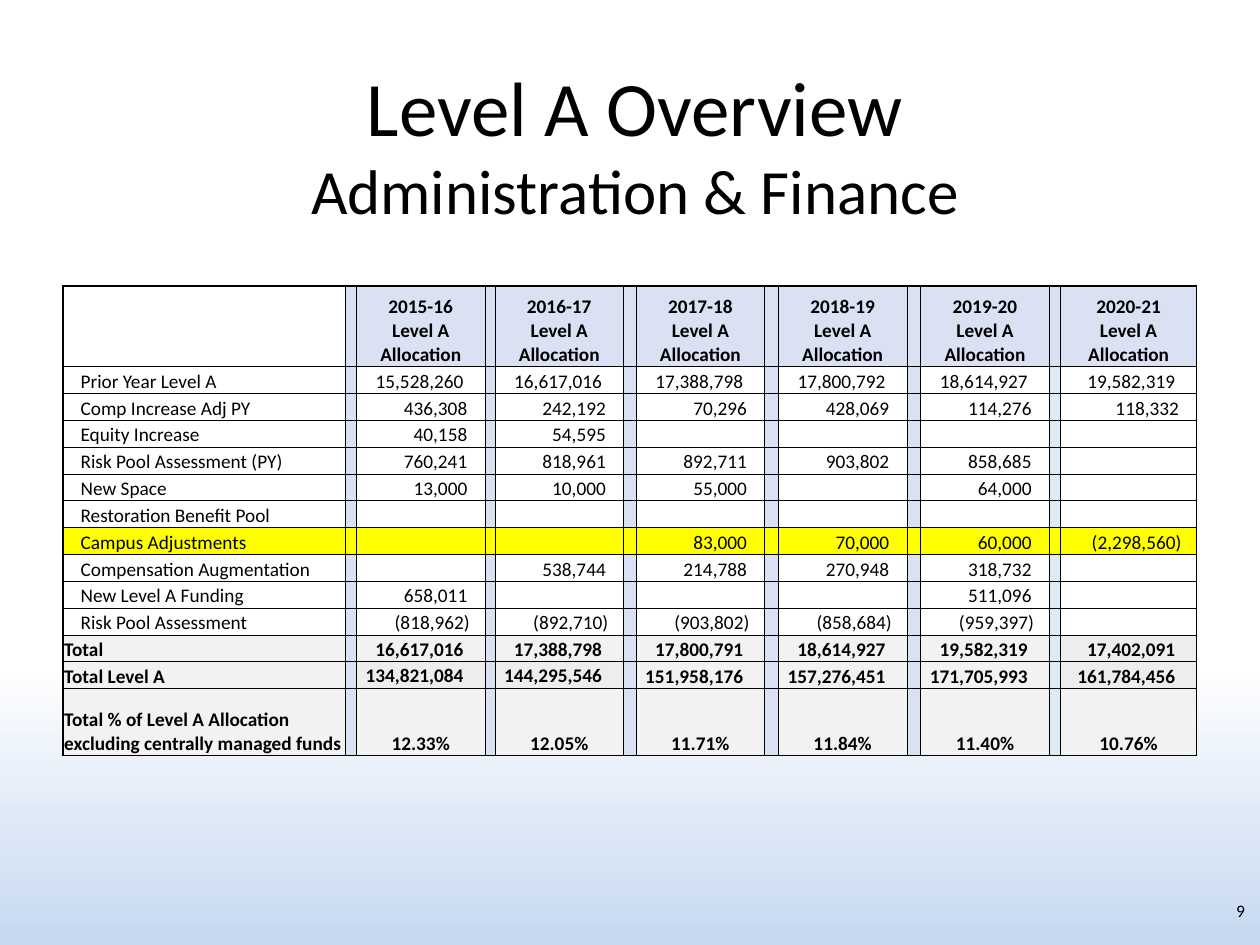
"""Build the Level A overview slide for Administration & Finance."""
import pptx
import pptx.dml.color
import pptx.enum.text
import pptx.oxml
import pptx.oxml.ns
import pptx.util

Inches = pptx.util.Inches
Pt = pptx.util.Pt
ALIGN = pptx.enum.text.PP_ALIGN
ANCHOR = pptx.enum.text.MSO_ANCHOR

COLORS = {
    "ink": "000000", "white": "FFFFFF", "sky": "C6D9F1", "head": "D9E1F2",
    "pale": "DDEBF7", "mark": "FFFF00", "total": "F2F2F2", "gray": "EDEDED",
}
YEARS = ["2015-16", "2016-17", "2017-18", "2018-19", "2019-20", "2020-21"]
ROWS = [
    ["Prior Year Level A", "15,528,260", "16,617,016", "17,388,798",
     "17,800,792", "18,614,927", "19,582,319"],
    ["Comp Increase Adj PY", "436,308", "242,192", "70,296", "428,069", "114,276", "118,332"],
    ["Equity Increase", "40,158", "54,595", "", "", "", ""],
    ["Risk Pool Assessment (PY)", "760,241", "818,961", "892,711", "903,802", "858,685", ""],
    ["New Space", "13,000", "10,000", "55,000", "", "64,000", ""],
    ["Restoration Benefit Pool", "", "", "", "", "", ""],
    ["Campus Adjustments", "", "", "83,000", "70,000", "60,000", "(2,298,560)"],
    ["Compensation Augmentation", "", "538,744", "214,788", "270,948", "318,732", ""],
    ["New Level A Funding", "658,011", "", "", "", "511,096", ""],
    ["Risk Pool Assessment", "(818,962)", "(892,710)", "(903,802)",
     "(858,684)", "(959,397)", ""],
    ["Total", "16,617,016", "17,388,798", "17,800,791",
     "18,614,927", "19,582,319", "17,402,091"],
    ["Total Level A", "134,821,084", "144,295,546", "151,958,176",
     "157,276,451", "171,705,993", "161,784,456"],
    ["Total % of Level A Allocation excluding centrally managed funds",
     "12.33%", "12.05%", "11.71%", "11.84%", "11.40%", "10.76%"],
]
GAPS = [0.09, 0.08, 0.1, 0.11, 0.11, 0.09]
WIDTHS = [1.02] * 5 + [1.08]
MARK, TOTAL, LEVEL, LAST = 7, 11, 12, 13
GRAYS = {(TOTAL, 12), (LEVEL, 2), (LEVEL, 4), (LEVEL, 12)}


def color(name):
    """Return a named colour."""
    return pptx.dml.color.RGBColor.from_string(COLORS[name])


def write(para, text, size, align, bold=False):
    """Add one run to a paragraph."""
    para.alignment = align
    run = para.add_run()
    run.text = text
    run.font.name = "Calibri"
    run.font.size = Pt(size)
    run.font.bold = bold
    run.font.color.rgb = color("ink")


def label(slide, box, lines, align):
    """Add a text box with one paragraph for each (text, size) line."""
    frame = slide.shapes.add_textbox(*map(Inches, box)).text_frame
    frame.word_wrap = True
    for num, (text, size) in enumerate(lines):
        para = frame.add_paragraph() if num else frame.paragraphs[0]
        write(para, text, size, align)


def paint(slide):
    """Fill the background with a gradient toward the bottom."""
    fill = slide.background.fill
    fill.gradient()
    fill.gradient_angle = 270
    for stop, name, place in zip(fill.gradient_stops, ("white", "sky"), (0.7, 1)):
        stop.color.rgb = color(name)
        stop.position = place


def edge(cell, row, col):
    """Draw the four borders, heavier around the table."""
    props = cell._tc.get_or_add_tcPr()
    outer = {"L": col == 0, "R": col == 12, "T": row == 0, "B": row == LAST}
    for side, heavy in outer.items():
        width = Pt(1 if heavy else 0.5)
        props.append(pptx.oxml.parse_xml(
            f'<a:ln{side} {pptx.oxml.ns.nsdecls("a")} w="{width}"><a:solidFill>'
            f'<a:srgbClr val="{COLORS["ink"]}"/></a:solidFill></a:ln{side}>'))


def shade(row, col):
    """Name the fill of a cell, or None where it is clear."""
    if row == MARK:
        return "mark"
    if row == 0:
        return "head" if col else None
    if col % 2:
        return "pale" if col == 11 else "head"
    if row >= TOTAL:
        return "gray" if (row, col) in GRAYS else "total"
    return None


def layout(text, row, col):
    """Give the alignment, left inset and right inset of a cell."""
    if col == 0:
        return ALIGN.LEFT, 0.01 if row >= TOTAL else 0.14, 0.01
    if row in (0, LAST) or not text:
        return ALIGN.CENTER, 0.01, 0.01
    if text.endswith(")"):
        return ALIGN.RIGHT, 0.01, 0.12
    return ALIGN.RIGHT, 0.01, 0.17 if len(text) >= 10 else 0.14


def fill_cell(cell, text, row, col):
    """Set the text, insets, borders and fill of one cell."""
    align, left, right = layout(text, row, col)
    cell.margin_left, cell.margin_right = Inches(left), Inches(right)
    cell.margin_top, cell.margin_bottom = Inches(0.01), 0
    middle = row == LEVEL and col in (2, 4)
    cell.vertical_anchor = ANCHOR.MIDDLE if middle else ANCHOR.BOTTOM
    frame = cell.text_frame
    for num, line in enumerate(text.split("\n")):
        para = frame.add_paragraph() if num else frame.paragraphs[0]
        if line:
            write(para, line, 11, align, row == 0 or row >= TOTAL)
        else:
            para._p.get_or_add_endParaRPr().set("sz", "1100")
    edge(cell, row, col)
    name = shade(row, col)
    if name:
        cell.fill.solid()
        cell.fill.fore_color.rgb = color(name)
    else:
        cell.fill.background()


def grid(slide):
    """Add the allocation table with a narrow column before each year."""
    head = [""] + [f"{year}\nLevel A Allocation" for year in YEARS]
    rows = [head] + ROWS
    widths = [2.24] + [size for pair in zip(GAPS, WIDTHS) for size in pair]
    top, base, total = 0.64, 0.53, 3.73
    heights = [top] + [(total - top - base) / 12] * 12 + [base]
    table = slide.shapes.add_table(
        len(rows), len(widths), Inches(0.5), Inches(2.27), Inches(9), Inches(total)).table
    table.first_row = table.horz_banding = False
    for col, width in zip(table.columns, widths):
        col.width = Inches(width)
    for row, height in zip(table.rows, heights):
        row.height = Inches(height)
    for row, texts in enumerate(rows):
        for col in range(len(widths)):
            text = "" if col % 2 else texts[col // 2]
            fill_cell(table.cell(row, col), text, row, col)


def main():
    """Build and save the slide."""
    deck = pptx.Presentation()
    deck.slide_width, deck.slide_height = Inches(10), Inches(7.5)
    slide = deck.slides.add_slide(deck.slide_layouts[6])
    paint(slide)
    label(slide, (0.33, 0.42, 9.42, 1.5),
          [("Level A Overview", 44), ("Administration & Finance", 36)], ALIGN.CENTER)
    label(slide, (7.65, 7.09, 2.33, 0.4), [("9", 10)], ALIGN.RIGHT)
    grid(slide)
    deck.save("out.pptx")


if __name__ == "__main__":
    main()
